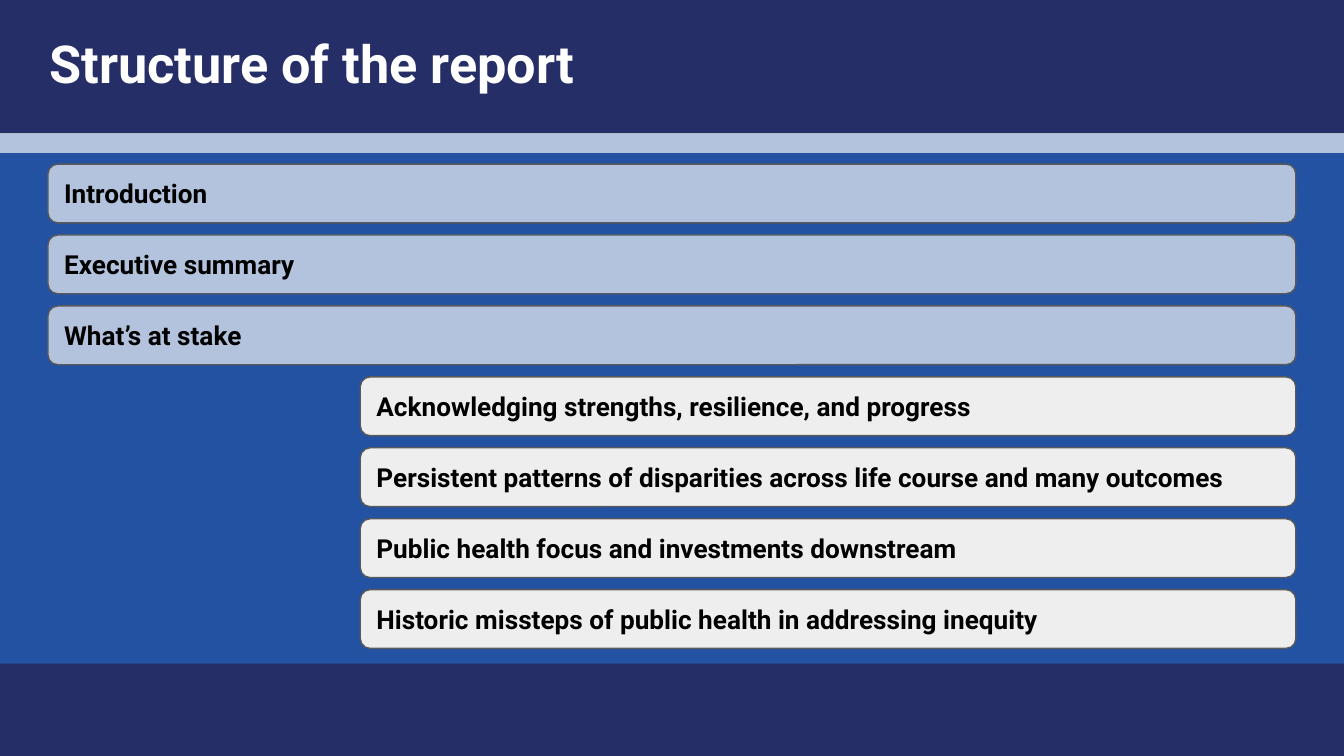
"""Build the slide that outlines the structure of the report."""
from pptx import Presentation
from pptx.dml.color import RGBColor
from pptx.enum.shapes import MSO_SHAPE
from pptx.enum.text import MSO_ANCHOR, PP_ALIGN
from pptx.util import Pt

NAVY = RGBColor(0x25, 0x2E, 0x67)
BLUE = RGBColor(0x23, 0x52, 0xA2)
PALE_BLUE = RGBColor(0xB3, 0xC3, 0xDD)
PALE_GREY = RGBColor(0xEE, 0xEE, 0xEE)
GREY = RGBColor(0x59, 0x59, 0x59)
WHITE = RGBColor(0xFF, 0xFF, 0xFF)
BLACK = RGBColor(0x00, 0x00, 0x00)

WIDTH, HEIGHT = 720, 405
RIGHT_EDGE = 694.2
ROW_TOP, ROW_STEP, ROW_HEIGHT = 87.9, 38, 31.5
BANDS = [(75.6, 286.6, BLUE), (355.5, 49.5, NAVY), (-0.5, 72, NAVY), (71.8, 10.1, PALE_BLUE)]
CHAPTERS = ["Introduction", "Executive summary", "What’s at stake"]
SECTIONS = [
    "Acknowledging strengths, resilience, and progress",
    "Persistent patterns of disparities across life course and many outcomes",
    "Public health focus and investments downstream",
    "Historic missteps of public health in addressing inequity",
]


def write(box, text, size=14, color=BLACK, font="Roboto", bold=True):
    frame = box.text_frame
    frame.word_wrap = True
    frame.vertical_anchor = MSO_ANCHOR.MIDDLE
    frame.margin_left = frame.margin_right = Pt(7.2)
    frame.margin_top = frame.margin_bottom = Pt(7.2)
    para = frame.paragraphs[0]
    para.alignment = PP_ALIGN.LEFT
    span = para.add_run()
    span.text = text
    span.font.name = font
    span.font.size = Pt(size)
    span.font.bold = bold
    span.font.color.rgb = color


class Page:
    def __init__(self, deck):
        self.shapes = deck.slides.add_slide(deck.slide_layouts[6]).shapes

    def shape(self, kind, left, top, width, height, fill):
        box = self.shapes.add_shape(kind, Pt(left), Pt(top), Pt(width), Pt(height))
        box.shadow.inherit = False
        box.fill.solid()
        box.fill.fore_color.rgb = fill
        return box

    def band(self, top, height, fill):
        box = self.shape(MSO_SHAPE.RECTANGLE, 0, top, WIDTH, height, fill)
        box.line.fill.background()

    def title(self, text):
        box = self.shapes.add_textbox(Pt(19.4), Pt(11), Pt(690.5), Pt(45.4))
        write(box, text, size=28, color=WHITE)

    def row(self, index, text, left, fill):
        top = ROW_TOP + index * ROW_STEP
        box = self.shape(MSO_SHAPE.ROUNDED_RECTANGLE, left, top, RIGHT_EDGE - left, ROW_HEIGHT, fill)
        box.line.color.rgb = GREY
        box.line.width = Pt(0.75)
        write(box, text)


def main():
    deck = Presentation()
    deck.slide_width, deck.slide_height = Pt(WIDTH), Pt(HEIGHT)
    page = Page(deck)
    for top, height, fill in BANDS:
        page.band(top, height, fill)
    page.title("Structure of the report")
    for index, text in enumerate(CHAPTERS):
        page.row(index, text, left=25.7, fill=PALE_BLUE)
    for index, text in enumerate(SECTIONS, start=len(CHAPTERS)):
        page.row(index, text, left=193, fill=PALE_GREY)
    deck.save("out.pptx")


if __name__ == "__main__":
    main()
